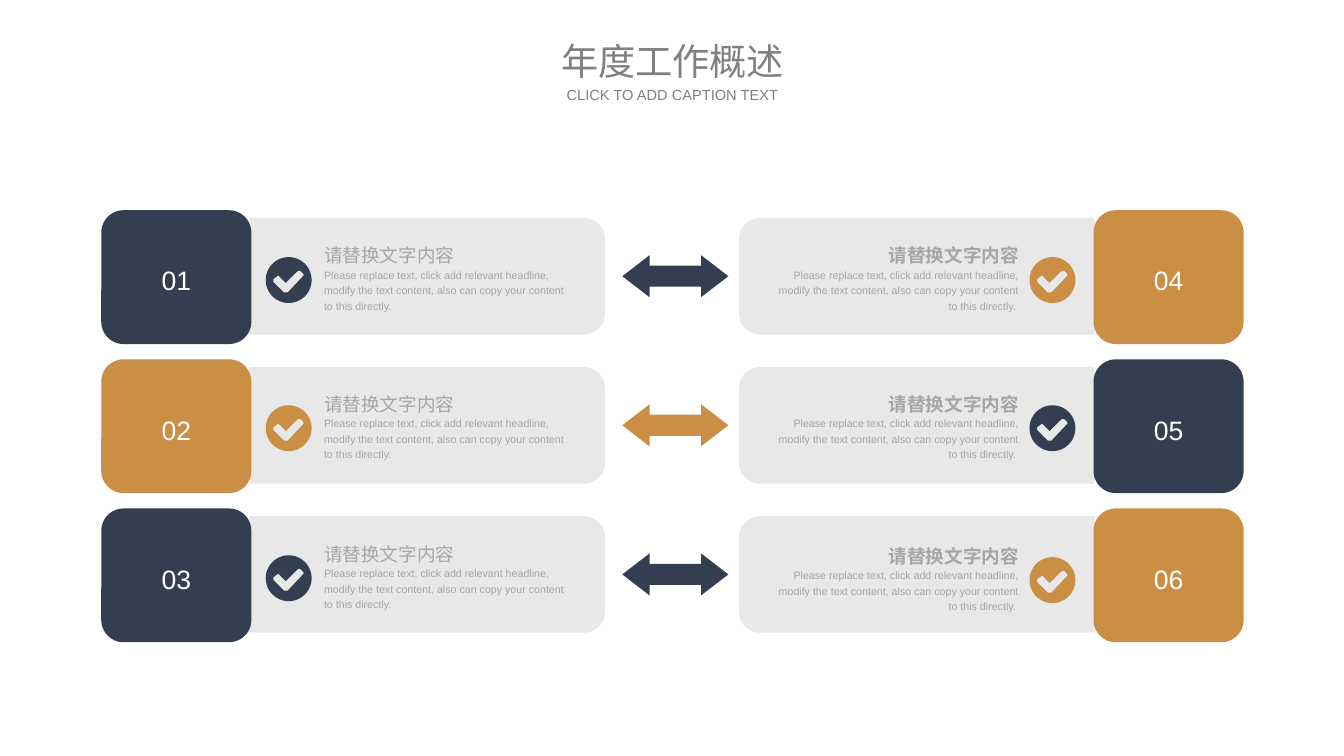
"""Build the annual work overview slide: six numbered cards joined by arrows."""
import math
from dataclasses import dataclass

from lxml import etree
from pptx import Presentation
from pptx.dml.color import RGBColor
from pptx.enum import shapes, text
from pptx.oxml import ns
from pptx.util import Inches, Pt


@dataclass(frozen=True)
class Theme:
    navy: str = "333F50"
    gold: str = "CA8F45"
    panel: str = "E6E6E6"
    body: str = "A6A6A6"
    title: str = "808080"
    white: str = "FFFFFF"
    font: str = "Arial"
    title_size: int = 28
    caption_size: int = 11
    number_size: int = 20
    heading_size: int = 14
    body_size: int = 8


theme = Theme()


def paint(shape, color):
    """Give a shape a plain fill with no line or shadow."""
    shape.shadow.inherit = False
    shape.fill.solid()
    shape.fill.fore_color.rgb = RGBColor.from_string(color)
    shape.line.fill.background()


def write(shape, runs, color, anchor, paragraph_format):
    """Write runs of (wording, size, bold) as one paragraph, a line break between them."""
    frame = shape.text_frame
    frame_format = {"word_wrap": True, "vertical_anchor": anchor, "margin_left": 0,
                    "margin_top": 0, "margin_right": 0, "margin_bottom": 0}
    for name, value in frame_format.items():
        setattr(frame, name, value)
    paragraph = frame.paragraphs[0]
    for name, value in paragraph_format.items():
        setattr(paragraph, name, value)
    for index, (wording, size, bold) in enumerate(runs):
        if index:
            paragraph.add_line_break()
        run = paragraph.add_run()
        run.text = wording
        run.font.color.rgb = RGBColor.from_string(color)
        for name, value in {"name": theme.font, "size": Pt(size), "bold": bold}.items():
            setattr(run.font, name, value)


presentation = Presentation()
presentation.slide_width = Inches(14.06)
presentation.slide_height = Inches(7.91)
slide = presentation.slides.add_slide(presentation.slide_layouts[6])

ROW_PITCH = 1.56
PANEL_WIDTH, PANEL_HEIGHT = 3.72, 1.22
BADGE_RADIUS = 0.24
HEADING = "请替换文字内容"
BODY = ("Please replace text, click add relevant headline, modify the text content, "
        "also can copy your content to this directly.")
CHECK = [(0.15, -0.07), (0.13, -0.09), (0.11, -0.1), (0.09, -0.09), (-0.03, 0.03),
         (-0.1, -0.04), (-0.11, -0.05), (-0.12, -0.04), (-0.16, -0.01), (-0.16, 0.02),
         (-0.05, 0.13), (-0.03, 0.13), (-0.01, 0.13), (0.15, -0.04), (0.16, -0.05)]
CIRCLE = [(BADGE_RADIUS * math.cos(math.radians(angle)),
           BADGE_RADIUS * math.sin(math.radians(angle))) for angle in range(0, 360, 5)]
SIDES = [
    {"panel": 2.61, "turn": 90, "badge": 3.02, "detail": 3.39, "box": 1.06, "first": 1,
     "align": text.PP_ALIGN.LEFT, "bold": False, "body": BODY,
     "colors": (theme.navy, theme.gold, theme.navy), "detail_tops": (2.51, 4.06, 5.63)},
    {"panel": 7.73, "turn": 270, "badge": 11.01, "detail": 8.08, "box": 11.44, "first": 4,
     "align": text.PP_ALIGN.RIGHT, "bold": True, "body": BODY + " ",
     "colors": (theme.gold, theme.navy, theme.gold), "detail_tops": (2.51, 4.06, 5.65)},
]

for side in SIDES:
    for row, color in enumerate(side["colors"]):
        offset = row * ROW_PITCH
        inset = (PANEL_WIDTH - PANEL_HEIGHT) / 2
        panel = slide.shapes.add_shape(
            shapes.MSO_SHAPE.ROUND_2_SAME_RECTANGLE,
            Inches(side["panel"] + inset), Inches(2.28 + offset - inset),
            Inches(PANEL_HEIGHT), Inches(PANEL_WIDTH))
        panel.rotation = side["turn"]
        panel.adjustments[0] = 0.18
        paint(panel, theme.panel)
        fill_color = panel.fill._xPr.find(".//" + ns.qn("a:srgbClr"))
        etree.SubElement(fill_color, ns.qn("a:alpha"), val="90000")

        detail_top = side["detail_tops"][row]
        detail = slide.shapes.add_textbox(Inches(side["detail"]), Inches(detail_top),
                                          Inches(2.58), Inches(0.77))
        write(detail, [(HEADING, theme.heading_size, side["bold"]),
                       (side["body"], theme.body_size, False)],
              theme.body, text.MSO_ANCHOR.TOP,
              {"alignment": side["align"], "line_spacing": 1.2, "space_before": Pt(2.8)})

        contours = [[(Inches(side["badge"] + x), Inches(detail_top + 0.42 + y))
                     for x, y in outline] for outline in (CIRCLE, CHECK)]
        builder = slide.shapes.build_freeform(*contours[0][0])
        builder.add_line_segments(contours[0][1:], close=True)
        builder.move_to(*contours[1][0])
        builder.add_line_segments(contours[1][1:], close=True)
        paint(builder.convert_to_shape(), color)

        box = slide.shapes.add_shape(shapes.MSO_SHAPE.ROUNDED_RECTANGLE, Inches(side["box"]),
                                     Inches(2.2 + offset), Inches(1.57), Inches(1.4))
        paint(box, color)
        write(box, [(f"{side['first'] + row:02d}", theme.number_size, False)],
              theme.white, text.MSO_ANCHOR.MIDDLE,
              {"alignment": text.PP_ALIGN.CENTER, "line_spacing": 1.2})

for row, color in enumerate((theme.navy, theme.gold, theme.navy)):
    arrow = slide.shapes.add_shape(shapes.MSO_SHAPE.LEFT_RIGHT_ARROW, Inches(6.51),
                                   Inches(2.67 + row * ROW_PITCH), Inches(1.11), Inches(0.44))
    arrow.adjustments[1] = 0.65
    paint(arrow, color)

for wording, top, height, size in (
        ("年度工作概述", 0.39, 0.49, theme.title_size),
        ("CLICK TO ADD CAPTION TEXT", 0.9, 0.19, theme.caption_size)):
    heading = slide.shapes.add_textbox(Inches(5.77), Inches(top), Inches(2.53), Inches(height))
    write(heading, [(wording, size, False)], theme.title, text.MSO_ANCHOR.MIDDLE,
          {"alignment": text.PP_ALIGN.CENTER})

presentation.save("out.pptx")
